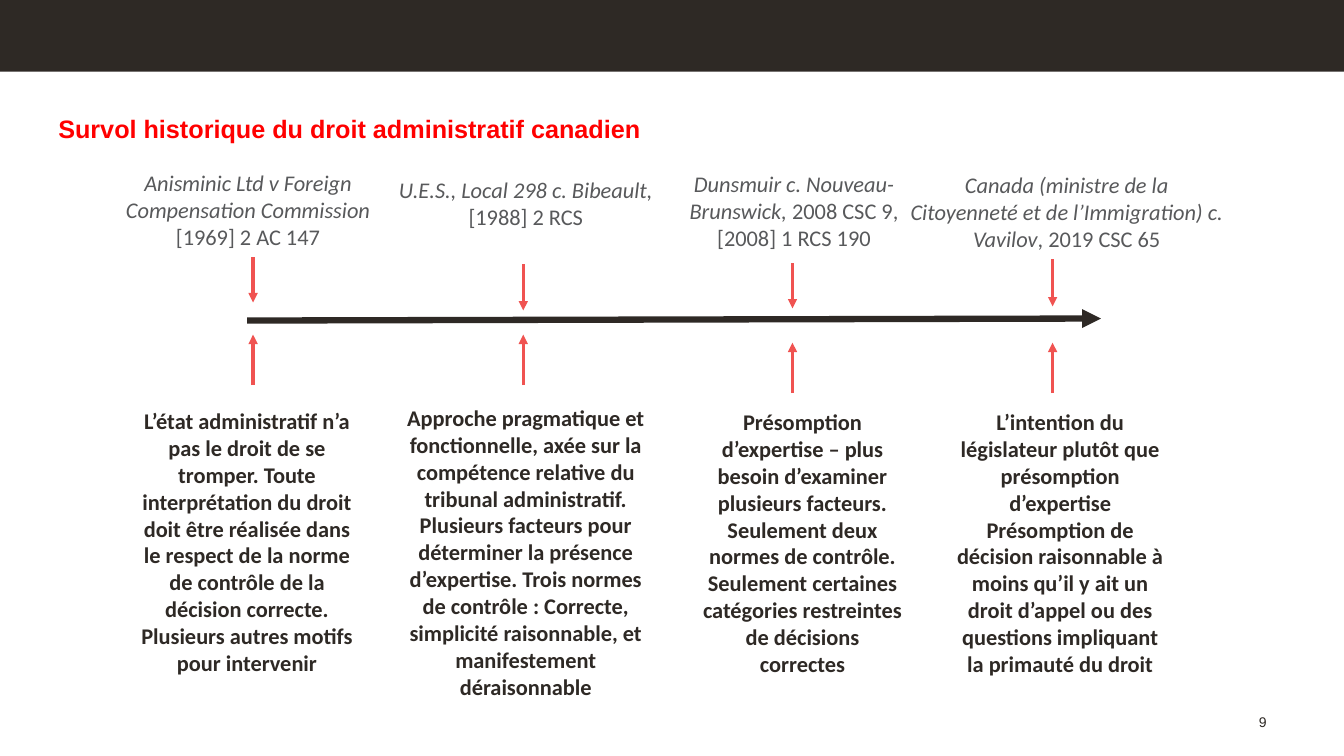
import dataclasses

import lxml.etree
import pptx
import pptx.dml.color
import pptx.enum.shapes
import pptx.enum.text
import pptx.oxml.ns
import pptx.util

Inches = pptx.util.Inches
Align = pptx.enum.text.PP_ALIGN
Anchor = pptx.enum.text.MSO_ANCHOR


@dataclasses.dataclass(frozen=True)
class Theme:
    dark: str = "2E2925"
    grey: str = "58595B"
    red: str = "FF0000"
    coral: str = "F05351"
    heading_font: str = "Arial"
    body_font: str = "Calibri"
    title_size: float = 18
    body_size: float = 16
    number_size: float = 10
    marker_width: float = 2.25
    axis_width: float = 4.5


@dataclasses.dataclass(frozen=True)
class Milestone:
    """A ruling on the timeline; boxes are (left, top, width, height) in inches."""
    x: float
    case: str
    citation: str
    case_box: tuple
    effect: str
    effect_box: tuple
    upper_arrow: tuple
    lower_arrow: tuple


MILESTONES = [
    Milestone(
        2.51, "Anisminic Ltd v Foreign Compensation Commission", " [1969] 2 AC 147",
        (1.14, 1.63, 2.64, 0.91),
        "L’état administratif n’a pas le droit de se tromper. Toute interprétation du droit "
        "doit être réalisée dans le respect de la norme de contrôle de la décision correcte. "
        "Plusieurs autres motifs pour intervenir",
        (1.26, 3.99, 2.38, 2.79), (2.55, 3.0), (3.82, 3.32)),
    Milestone(
        5.19, "U.E.S., Local 298 c. Bibeault, ", "[1988] 2 RCS",
        (3.77, 1.7, 2.89, 0.64),
        "Approche pragmatique et fonctionnelle, axée sur la compétence relative du tribunal "
        "administratif. Plusieurs facteurs pour déterminer la présence d’expertise. Trois "
        "normes de contrôle : Correcte, simplicité raisonnable, et manifestement déraisonnable",
        (3.85, 3.96, 2.73, 3.06), (2.62, 3.08), (3.82, 3.32)),
    Milestone(
        7.86, "Dunsmuir c. Nouveau-Brunswick, ", "2008 CSC 9, [2008] 1 RCS 190",
        (6.43, 1.64, 2.89, 0.91),
        "Présomption d’expertise – plus besoin d’examiner plusieurs facteurs. Seulement deux "
        "normes de contrôle. Seulement certaines catégories restreintes de décisions correctes",
        (6.86, 4.0, 2.2, 2.79), (2.61, 3.06), (3.9, 3.4)),
    Milestone(
        10.44, "Canada (ministre de la Citoyenneté et de l’Immigration) c. Vavilov",
        ", 2019 CSC 65",
        (8.92, 1.65, 3.32, 0.91),
        "L’intention du législateur plutôt que présomption d’expertise Présomption de décision "
        "raisonnable à moins qu’il y ait un droit d’appel ou des questions impliquant la "
        "primauté du droit",
        (9.36, 4.0, 2.31, 2.79), (2.57, 3.04), (3.9, 3.4)),
]


def rgb(color):
    return pptx.dml.color.RGBColor.from_string(color)


class TimelineSlide:
    def __init__(self, slide, theme):
        self.shapes = slide.shapes
        self.theme = theme

    def band(self, box, color):
        band = self.shapes.add_shape(
            pptx.enum.shapes.MSO_SHAPE.RECTANGLE, *map(Inches, box))
        band.shadow.inherit = False
        band.fill.solid()
        band.fill.fore_color.rgb = rgb(color)
        band.line.fill.background()

    def text(self, box, text, color, size, font=None, bold=False,
             align=Align.CENTER, anchor=Anchor.TOP, upright=None):
        """Add a text box; when upright is given, text is italic and upright follows it."""
        frame = self.shapes.add_textbox(*map(Inches, box)).text_frame
        frame.word_wrap = True
        frame.vertical_anchor = anchor
        frame.text = text
        paragraph = frame.paragraphs[0]
        paragraph.alignment = align
        if upright is not None:
            paragraph.runs[0].font.italic = True
            paragraph.add_run().text = upright
        for run in paragraph.runs:
            run.font.name = font or self.theme.body_font
            run.font.size = pptx.util.Pt(size)
            run.font.bold = bold
            run.font.color.rgb = rgb(color)
        return paragraph

    def arrow(self, start, end, color, width):
        arrow = self.shapes.add_connector(
            pptx.enum.shapes.MSO_CONNECTOR.STRAIGHT, *map(Inches, start + end))
        arrow.line.color.rgb = rgb(color)
        arrow.line.width = pptx.util.Pt(width)
        qn = pptx.oxml.ns.qn
        lxml.etree.SubElement(arrow.line._get_or_add_ln(), qn("a:tailEnd"), type="triangle")
        lxml.etree.SubElement(arrow._element.spPr, qn("a:effectLst"))

    def milestone(self, ruling):
        theme = self.theme
        self.text(ruling.case_box, ruling.case, theme.grey, theme.body_size,
                  upright=ruling.citation)
        self.text(ruling.effect_box, ruling.effect, theme.dark, theme.body_size, bold=True)
        for start_y, end_y in (ruling.upper_arrow, ruling.lower_arrow):
            self.arrow((ruling.x, start_y), (ruling.x, end_y),
                       theme.coral, theme.marker_width)


def main():
    deck = pptx.Presentation()
    deck.slide_width, deck.slide_height = Inches(13.33), Inches(7.5)
    theme = Theme()
    timeline = TimelineSlide(deck.slides.add_slide(deck.slide_layouts[6]), theme)

    timeline.band((0, 0, 13.33, 0.71), theme.dark)
    title = timeline.text(
        (0.48, 1.11, 12.54, 0.8), "Survol historique du droit administratif canadien",
        theme.red, theme.title_size, theme.heading_font, bold=True, align=Align.LEFT)
    title.line_spacing = 0.9
    timeline.arrow((2.45, 3.18), (10.92, 3.16), theme.dark, theme.axis_width)
    for ruling in MILESTONES:
        timeline.milestone(ruling)
    timeline.text((11.69, 6.89, 0.97, 0.4), "9", theme.dark, theme.number_size,
                  theme.heading_font, align=Align.RIGHT, anchor=Anchor.BOTTOM)

    deck.save("out.pptx")


if __name__ == "__main__":
    main()
